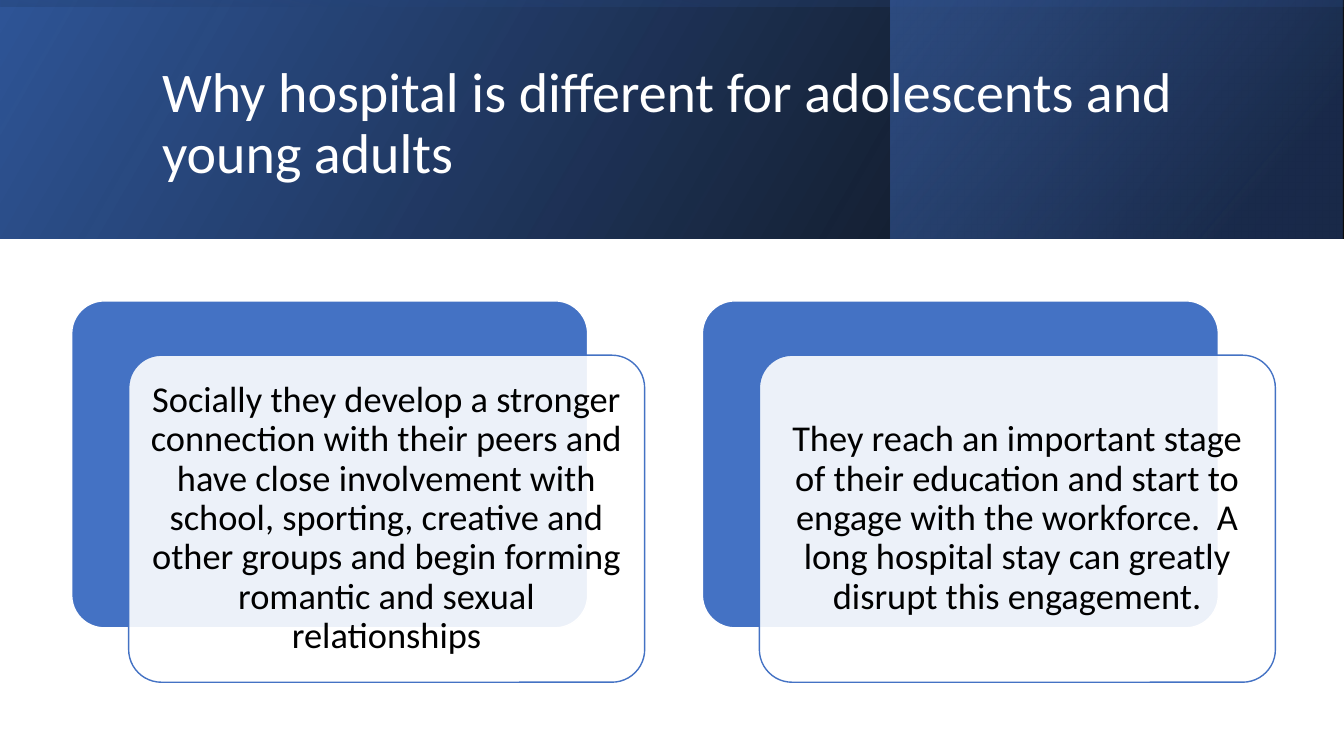
import lxml.etree
import pptx
import pptx.dml.color
import pptx.enum.shapes
import pptx.enum.text
import pptx.oxml.ns
import pptx.util

Pt = pptx.util.Pt
RGBColor = pptx.dml.color.RGBColor
Shape = pptx.enum.shapes.MSO_SHAPE
Align = pptx.enum.text.PP_ALIGN
Anchor = pptx.enum.text.MSO_ANCHOR
qn = pptx.oxml.ns.qn

BLACK = RGBColor(0x00, 0x00, 0x00)
WHITE = RGBColor(0xFF, 0xFF, 0xFF)
BLUE = RGBColor(0x44, 0x72, 0xC4)
DEEP_BLUE = RGBColor(0x2F, 0x55, 0x97)
NAVY = RGBColor(0x20, 0x38, 0x64)

SLIDE_WIDTH, SLIDE_HEIGHT = 960, 540
HEADER_HEIGHT = 170.64
CARD_WIDTH, CARD_HEIGHT = 368.6, 233.6
CARD_LEFT, CARD_TOP, CARD_STEP = 51.2, 214.9, 450.5
FRONT_SHIFT_X, FRONT_SHIFT_Y = 40.7, 38.8

TITLE = "Why hospital is different for adolescents and young adults"
REASONS = [
    "Socially they develop a stronger connection with their peers and have "
    "close involvement with school, sporting, creative and other groups and "
    "begin forming romantic and sexual relationships",
    "They reach an important stage of their education and start to engage "
    "with the workforce.  A long hospital stay can greatly disrupt this "
    "engagement.",
]


def apply(target, values):
    for name, value in values.items():
        setattr(target, name, value)


class HeaderCardSlide:
    """Draws gradient bands, text and layered cards on one slide."""

    font_name = "Calibri"
    line_spacing = 0.9
    corner = 0.1

    def __init__(self, slide):
        self.slide = slide

    def shape(self, kind, left, top, width, height):
        shape = self.slide.shapes.add_shape(
            kind, Pt(left), Pt(top), Pt(width), Pt(height))
        shape.shadow.inherit = False
        return shape

    def set_alpha(self, color_element, percent):
        alpha = lxml.etree.SubElement(color_element, qn("a:alpha"))
        alpha.set("val", str(percent * 1000))

    def band(self, left, top, width, height, stops, angle, rotation=0):
        band = self.shape(Shape.RECTANGLE, left, top, width, height)
        band.rotation = rotation
        band.line.fill.background()
        band.fill.gradient()
        properties = band._element.spPr
        properties.find(qn("a:xfrm")).set("flipH", "1")
        gradient = properties.find(qn("a:gradFill"))
        stop_list = gradient.find(qn("a:gsLst"))
        for stop in list(stop_list):
            stop_list.remove(stop)
        for position, color, opacity in stops:
            stop = lxml.etree.SubElement(stop_list, qn("a:gs"))
            stop.set("pos", str(position * 1000))
            color_element = lxml.etree.SubElement(stop, qn("a:srgbClr"))
            color_element.set("val", str(color))
            self.set_alpha(color_element, opacity)
        direction = gradient.find(qn("a:lin"))
        direction.set("ang", str(angle * 60000))
        direction.set("scaled", "0")

    def fill_text(self, shape, text, size, color, alignment, margins):
        frame = shape.text_frame
        apply(frame, {"word_wrap": True, "vertical_anchor": Anchor.MIDDLE,
                      **margins})
        paragraph = frame.paragraphs[0]
        paragraph.text = text
        apply(paragraph, {"alignment": alignment,
                          "line_spacing": self.line_spacing})
        font = paragraph.runs[0].font
        apply(font, {"name": self.font_name, "size": Pt(size)})
        font.color.rgb = color

    def title(self, text, left, top, width, height):
        box = self.slide.shapes.add_textbox(
            Pt(left), Pt(top), Pt(width), Pt(height))
        self.fill_text(box, text, 40, WHITE, Align.LEFT, {})

    def panel(self, left, top, fill, line):
        panel = self.shape(
            Shape.ROUNDED_RECTANGLE, left, top, CARD_WIDTH, CARD_HEIGHT)
        panel.adjustments[0] = self.corner
        panel.fill.solid()
        panel.fill.fore_color.rgb = fill
        panel.line.color.rgb = line
        panel.line.width = Pt(1)
        return panel

    def card(self, text, left, top):
        self.panel(left, top, BLUE, WHITE)
        front = self.panel(
            left + FRONT_SHIFT_X, top + FRONT_SHIFT_Y, WHITE, BLUE)
        fill = front._element.spPr.find(qn("a:solidFill"))
        self.set_alpha(fill.find(qn("a:srgbClr")), 90)
        sides = ("left", "top", "right", "bottom")
        margins = {f"margin_{side}": Pt(7.8) for side in sides}
        self.fill_text(front, text, 26, BLACK, Align.CENTER, margins)


def main():
    presentation = pptx.Presentation()
    apply(presentation, {"slide_width": Pt(SLIDE_WIDTH),
                         "slide_height": Pt(SLIDE_HEIGHT)})
    page = HeaderCardSlide(
        presentation.slides.add_slide(presentation.slide_layouts[6]))

    page.band(0, 0, SLIDE_WIDTH, HEADER_HEIGHT,
              [(0, BLACK, 96), (100, DEEP_BLUE, 100)], 330)
    page.band(636.2, 0, 323, HEADER_HEIGHT,
              [(19, NAVY, 68), (100, BLUE, 48)], 320)
    turned_offset = (SLIDE_WIDTH - HEADER_HEIGHT) / 2
    page.band(turned_offset, -turned_offset, HEADER_HEIGHT, SLIDE_WIDTH,
              [(23, DEEP_BLUE, 16), (99, BLACK, 45)], 350, rotation=270)

    page.title(TITLE, 108.7, 27.4, 765.4, 123.8)
    for index, reason in enumerate(REASONS):
        page.card(reason, CARD_LEFT + index * CARD_STEP, CARD_TOP)

    presentation.save("out.pptx")


if __name__ == "__main__":
    main()
